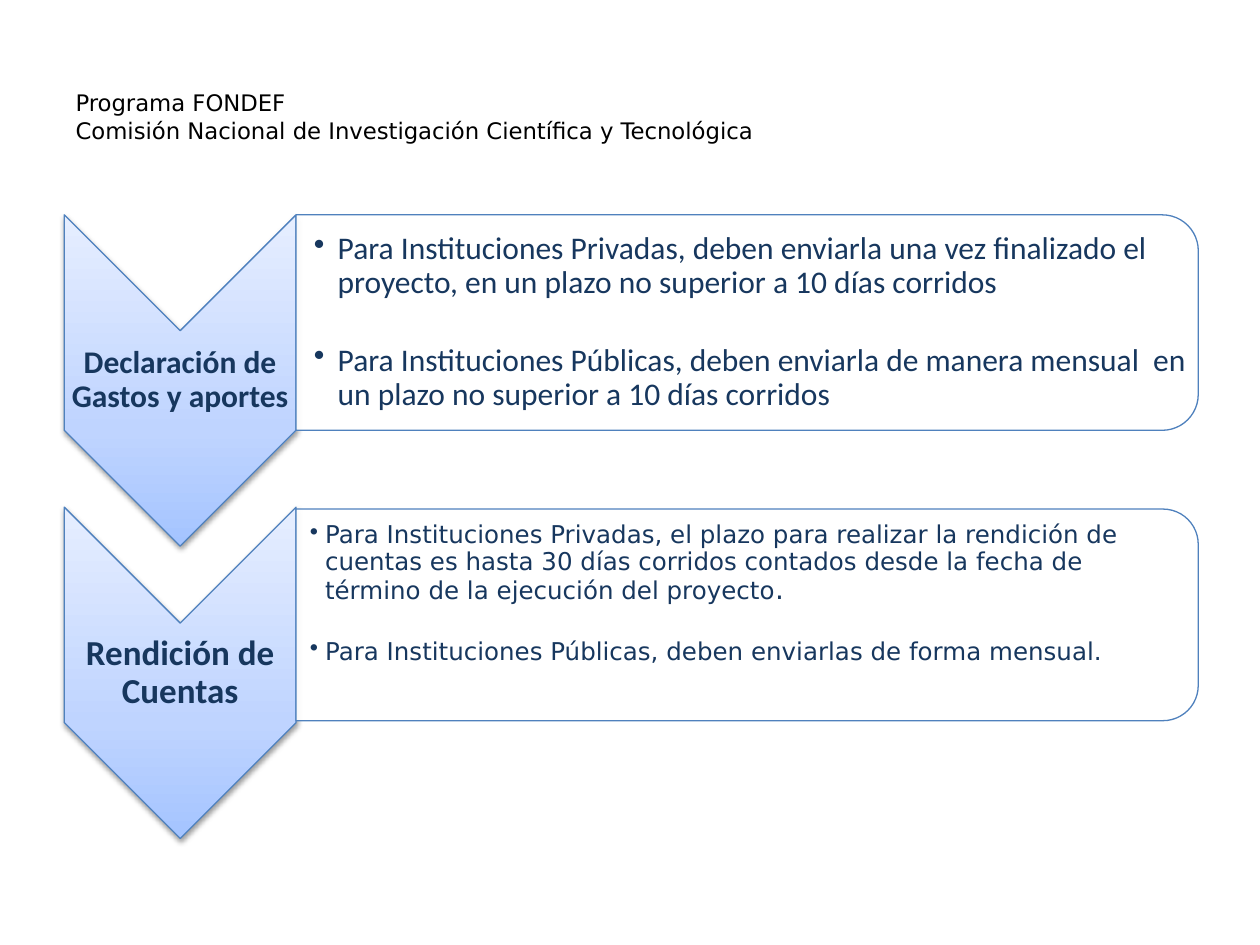
"""Build the FONDEF slide on expense declarations and account reporting."""
from lxml import etree
from pptx import Presentation
from pptx.dml.color import RGBColor as RGB
from pptx.enum.shapes import MSO_SHAPE as SHAPE
from pptx.enum.text import MSO_ANCHOR as ANCHOR, MSO_AUTO_SIZE as FIT, PP_ALIGN as ALIGN
from pptx.oxml import parse_xml
from pptx.oxml.ns import qn
from pptx.util import Emu, Inches, Pt

C = {"ink": "17375E", "line": "4F81BD", "panel": "FFFFFF", "title": "000000",
     "deep": "A4C4FF", "mid": "BFD4FF", "pale": "E6EEFF"}
NS = 'xmlns:a="http://schemas.openxmlformats.org/drawingml/2006/main"'
GRADIENT = f'<a:gradFill {NS} rotWithShape="0"><a:gsLst>' + "".join(
    f'<a:gs pos="{pos}000"><a:srgbClr val="{C[name]}"/></a:gs>'
    for pos, name in ((0, "deep"), (35, "mid"), (100, "pale"))
) + '</a:gsLst><a:lin ang="16200000" scaled="0"/></a:gradFill>'
SHADOW = (f'<a:effectLst {NS}><a:outerShdw blurRad="{Pt(3.1)}" dist="{Pt(1.6)}" dir="5400000" '
          'rotWithShape="0"><a:srgbClr val="000000"><a:alpha val="38000"/></a:srgbClr>'
          '</a:outerShdw></a:effectLst>')

LEFT, LABEL_W, PANEL_W, TEXT_W = 0.51, 1.84, 7.16, 7.08
PANEL_X = LEFT + LABEL_W
ROW_MID, ROW_PITCH, CHEVRON_H = 2.56, 2.32, 2.63

ROWS = [
    {"label": "Declaración de Gastos y aportes", "label_size": 18, "font": "Calibri",
     "panel_h": 1.71, "text_h": 1.54, "indent": 0.19, "gap": 25, "insets": (0.14, 0.01),
     "items": [
         [("Para Instituciones Privadas, deben enviarla una vez finalizado el proyecto, "
           "en un plazo no superior a 10 días corridos", 18)],
         [("Para Instituciones Públicas, deben enviarla de manera mensual  en un plazo "
           "no superior a 10 días corridos", 18)]]},
    {"label": "Rendición de Cuentas", "label_size": 20, "font": "DejaVu Sans",
     "panel_h": 1.68, "text_h": 1.52, "indent": 0.12, "gap": 19, "insets": (0.11, 0.34),
     "items": [
         [("Para Instituciones Privadas, el plazo para realizar la rendición de cuentas es "
           "hasta 30 días corridos contados desde la fecha de término de la ejecución "
           "del proyecto", 14), (".", 16)],
         [("Para Instituciones Públicas, deben enviarlas de forma mensual.", 14)]]},
]


def add_turned(kind, x, mid, w, h):
    sp = s.shapes.add_shape(kind, Inches(x + (w - h) / 2), Inches(mid - w / 2),
                            Inches(h), Inches(w))
    sp.rotation = 90
    sp.shadow.inherit = False
    sp.fill.solid()
    sp.fill.fore_color.rgb = RGB.from_string(C["panel"])
    sp.line.color.rgb = RGB.from_string(C["line"])
    sp.line.width = Pt(0.75)
    return sp


def add_text(x, mid, w, h, left, bottom):
    tf = s.shapes.add_textbox(Inches(x), Inches(mid - h / 2), Inches(w), Inches(h)).text_frame
    fmt = {"word_wrap": True, "vertical_anchor": ANCHOR.MIDDLE,
           "margin_left": Inches(left), "margin_right": Inches(0.01),
           "margin_top": Inches(0.01), "margin_bottom": Inches(bottom)}
    for name, value in fmt.items():
        setattr(tf, name, value)
    return tf


prs = Presentation()
prs.slide_width, prs.slide_height = Inches(10), Inches(7.5)
s = prs.slides.add_slide(prs.slide_layouts[5])

title = s.shapes.title
for name, value in {"left": 0.5, "top": 0.3, "width": 7.81, "height": 1.25}.items():
    setattr(title, name, Inches(value))
tf = title.text_frame
tf.text = "Programa FONDEF\vComisión Nacional de Investigación Científica y Tecnológica"
tf.auto_size, tf.vertical_anchor = FIT.NONE, ANCHOR.MIDDLE
p = tf.paragraphs[0]
p.alignment = ALIGN.LEFT
for r in p.runs:
    r.font.name, r.font.size = "DejaVu Sans", Pt(13)
    r.font.color.rgb = RGB.from_string(C["title"])

for i, row in enumerate(ROWS):
    mid = ROW_MID + i * ROW_PITCH
    chevron_mid = mid + LABEL_W / 4

    sp = add_turned(SHAPE.CHEVRON, LEFT, chevron_mid, LABEL_W, CHEVRON_H)
    props = sp._element.spPr
    props.replace(props.find(qn("a:solidFill")), parse_xml(GRADIENT))
    props.replace(props.find(qn("a:effectLst")), parse_xml(SHADOW))

    p = add_text(LEFT, chevron_mid, LABEL_W, 0.79, 0.01, 0.01).paragraphs[0]
    p.alignment, p.line_spacing = ALIGN.CENTER, 0.9
    r = p.add_run()
    r.text = row["label"]
    r.font.name, r.font.size, r.font.bold = "Calibri", Pt(row["label_size"]), True
    r.font.color.rgb = RGB.from_string(C["ink"])

    sp = add_turned(SHAPE.ROUND_2_SAME_RECTANGLE, PANEL_X, mid, PANEL_W, row["panel_h"])
    color = sp._element.spPr.find(qn("a:solidFill"))[0]
    etree.SubElement(color, qn("a:alpha"), val="90000")

    tf = add_text(PANEL_X, mid, TEXT_W, row["text_h"], *row["insets"])
    for j, item in enumerate(row["items"]):
        p = tf.add_paragraph() if j else tf.paragraphs[0]
        props = p._p.get_or_add_pPr()
        indent = Emu(Inches(row["indent"]))
        props.set("marL", str(indent))
        props.set("indent", str(-indent))
        etree.SubElement(props, qn("a:buChar"), char="•")
        p.line_spacing = 0.9
        if j:
            p.space_before = Pt(row["gap"])
        for text, size in item:
            r = p.add_run()
            r.text = text
            r.font.name, r.font.size = row["font"], Pt(size)
            r.font.color.rgb = RGB.from_string(C["ink"])

prs.save("out.pptx")
